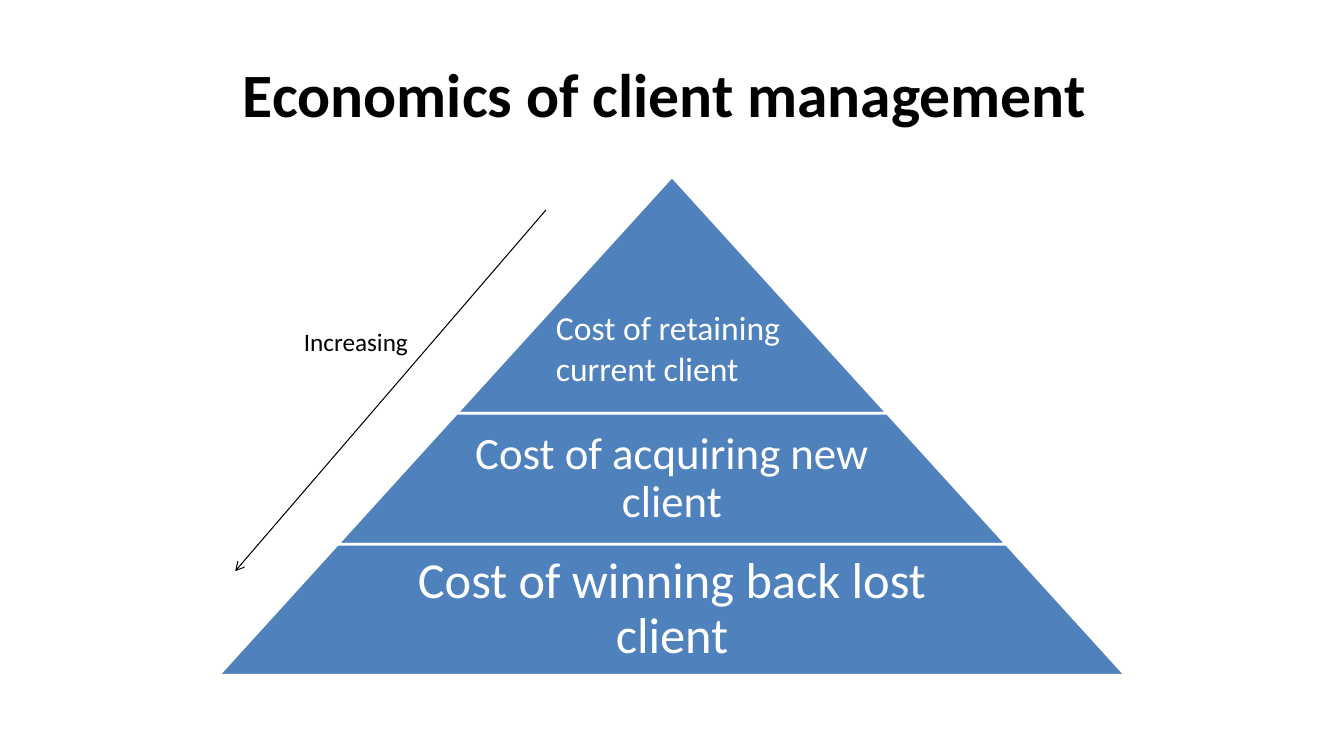
"""Build a slide with a three-level pyramid of client management costs."""
from dataclasses import dataclass

from lxml.etree import SubElement
from pptx import Presentation
from pptx.dml.color import RGBColor
from pptx.enum.shapes import MSO_CONNECTOR, MSO_SHAPE
from pptx.enum.text import MSO_ANCHOR, PP_ALIGN
from pptx.oxml.ns import qn
from pptx.slide import Slide
from pptx.util import Emu, Inches, Pt

WIDTH, HEIGHT = Inches(13.333), Inches(7.5)
COLUMNS, ROWS = 160, 90
COLORS = {"band": "4F81BD", "light": "FFFFFF", "dark": "000000"}
FONT = "Calibri"

CENTER, APEX = 80, 21
SLOPE = 54 / 59.4
BAND_DEPTHS = (28.2, 15.6, 15.6)
LABEL_SHARE = 0.65


@dataclass(frozen=True)
class Area:
    left: float
    top: float
    width: float
    height: float

    def lengths(self) -> tuple[Emu, Emu, Emu, Emu]:
        return col(self.left), row(self.top), col(self.width), row(self.height)


@dataclass(frozen=True)
class Label:
    text: str
    area: Area
    size: float
    color: str = "light"
    bold: bool = False
    align: PP_ALIGN = PP_ALIGN.LEFT
    anchor: MSO_ANCHOR = MSO_ANCHOR.TOP
    spacing: float = 1.0
    inset: float | None = None


def col(count: float) -> Emu:
    return Emu(round(WIDTH * count / COLUMNS))


def row(count: float) -> Emu:
    return Emu(round(HEIGHT * count / ROWS))


def rgb(name: str) -> RGBColor:
    return RGBColor.from_string(COLORS[name])


def pyramid_bands() -> list[Area]:
    bands = []
    top = APEX
    for depth in BAND_DEPTHS:
        half = SLOPE * (top + depth - APEX)
        bands.append(Area(CENTER - half, top, 2 * half, depth))
        top += depth
    return bands


def band_label(text: str, band: Area, size: float, inset: float) -> Label:
    width = band.width * LABEL_SHARE
    area = Area(CENTER - width / 2, band.top, width, band.height)
    return Label(text, area, size, align=PP_ALIGN.CENTER,
                 anchor=MSO_ANCHOR.MIDDLE, spacing=0.9, inset=inset)


def draw_band(slide: Slide, area: Area) -> None:
    band = slide.shapes.add_shape(MSO_SHAPE.TRAPEZOID, *area.lengths())
    band.adjustments[0] = SLOPE
    band.shadow.inherit = False
    band.fill.solid()
    band.fill.fore_color.rgb = rgb("band")
    band.line.color.rgb = rgb("light")
    band.line.width = Pt(2)


def draw_label(slide: Slide, label: Label) -> None:
    frame = slide.shapes.add_textbox(*label.area.lengths()).text_frame
    frame.word_wrap = True
    frame.vertical_anchor = label.anchor
    if label.inset is not None:
        frame.margin_left = frame.margin_right = Inches(label.inset)
        frame.margin_top = frame.margin_bottom = Inches(label.inset)
    paragraph = frame.paragraphs[0]
    paragraph.text = label.text
    paragraph.alignment = label.align
    paragraph.line_spacing = label.spacing
    paragraph.font.name = FONT
    paragraph.font.size = Pt(label.size)
    paragraph.font.bold = label.bold
    paragraph.font.color.rgb = rgb(label.color)


def draw_increase(slide: Slide, start: tuple[float, float], end: tuple[float, float]) -> None:
    increase = slide.shapes.add_connector(
        MSO_CONNECTOR.STRAIGHT, col(start[0]), row(start[1]), col(end[0]), row(end[1]))
    increase.line.color.rgb = rgb("dark")
    increase.line.width = Pt(0.75)
    SubElement(increase.line._get_or_add_ln(), qn("a:tailEnd"), type="arrow")
    SubElement(increase._element.spPr, qn("a:effectLst"))


def main() -> None:
    deck = Presentation()
    deck.slide_width, deck.slide_height = WIDTH, HEIGHT
    slide = deck.slides.add_slide(deck.slide_layouts[6])

    bands = pyramid_bands()
    for band in bands:
        draw_band(slide, band)

    _, acquiring, winning = bands
    labels = (
        Label("Economics of client management ", Area(8, 3.6, 144, 15), 44, "dark",
              bold=True, align=PP_ALIGN.CENTER, anchor=MSO_ANCHOR.MIDDLE),
        Label("Cost of retaining current client", Area(65, 36, 33, 14.5), 24),
        band_label("Cost of acquiring new client", acquiring, 32, 0.04),
        band_label("Cost of winning back lost client", winning, 36, 0.05),
        Label("Increasing", Area(35, 38.2, 27, 4.8), 18, "dark"),
    )
    for label in labels:
        draw_label(slide, label)
    draw_increase(slide, (65, 25), (28, 68))
    deck.save("out.pptx")


if __name__ == "__main__":
    main()
